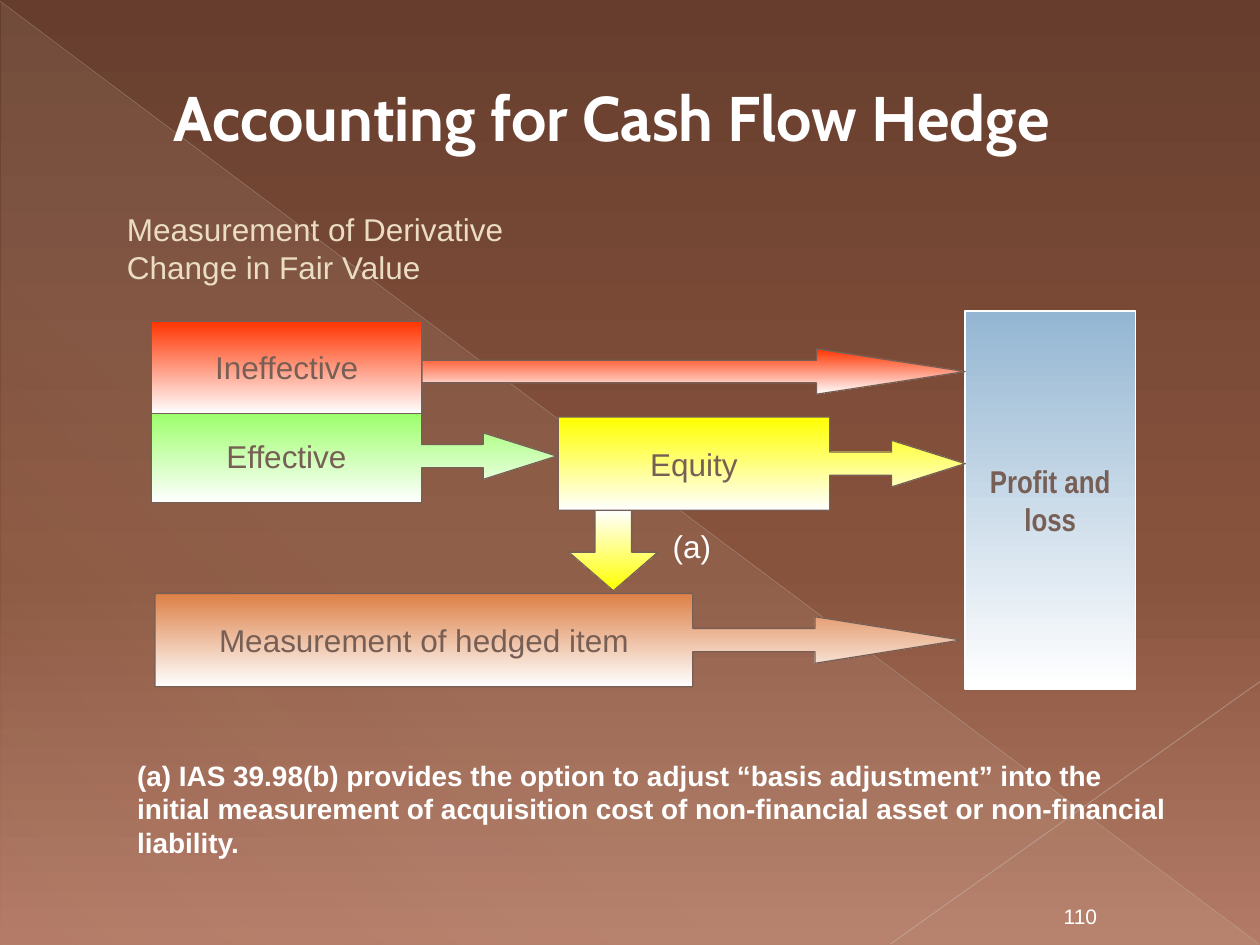
from dataclasses import dataclass

from lxml.etree import SubElement
from pptx import Presentation
from pptx.dml.color import RGBColor as Rgb
from pptx.enum.shapes import MSO_CONNECTOR as Connector, MSO_SHAPE as Shape
from pptx.enum.text import MSO_ANCHOR as Anchor, MSO_AUTO_SIZE as AutoSize, PP_ALIGN as Align
from pptx.oxml.ns import qn
from pptx.util import Pt


@dataclass(frozen=True)
class Theme:
    """Colours, fonts and type sizes of the deck."""
    white: str = "FFFFFF"
    sand: str = "EBDDC3"
    brown: str = "775F55"
    red: str = "FF3300"
    green: str = "99FF66"
    yellow: str = "FFFF00"
    orange: str = "DD8047"
    blue: str = "94B6D2"
    falling_line: str = "C8BCB8"
    rising_line: str = "CEC3BF"
    backdrop: tuple = ((0, "673E2E"), (60, "88533D"), (100, "B37B67"))
    veil: tuple = ((0, "EBDDC3", 10), (70, "EBDDC3", 8), (100, "EBDDC3", 1))
    heading_font: str = "Cabin"
    body_font: str = "Arial"
    narrow_font: str = "Arial Narrow"
    heading_size: int = 36
    body_size: int = 18
    note_size: int = 16
    number_size: int = 12


class SlideBuilder:
    """Draws styled elements on the current slide, with lengths in points."""

    def __init__(self, page, theme):
        self.page = page
        self.theme = theme

    def gradient(self, fill, element, stops, angle=90):
        """Fill with (position, colour, optional opacity) stops at a clockwise angle."""
        fill.gradient()
        fill.gradient_angle = 360 - angle
        stop_list = element.xpath(".//a:gsLst")[0]
        for old in list(stop_list):
            stop_list.remove(old)
        for position, colour, *opacity in stops:
            stop = SubElement(stop_list, qn("a:gs"), pos=str(position * 1000))
            paint = SubElement(stop, qn("a:srgbClr"), val=colour)
            for value in opacity:
                SubElement(paint, qn("a:alpha"), val=str(value * 1000))

    def background(self, stops):
        """Fill the slide background."""
        self.gradient(self.page.background.fill, self.page._element, stops)

    def set_text(self, box, lines, colour, size=None, font=None, bold=False,
                 align=Align.CENTER, anchor=Anchor.MIDDLE, wrap=False):
        """Put paragraphs of one style into a box."""
        frame = box.text_frame
        frame.text = "\n".join(lines)
        frame.word_wrap = wrap
        frame.auto_size = AutoSize.NONE
        frame.vertical_anchor = anchor
        for para in frame.paragraphs:
            para.alignment = align
            para.font.name = font or self.theme.body_font
            para.font.size = Pt(size or self.theme.body_size)
            para.font.bold = bold
            para.font.color.rgb = Rgb.from_string(colour)

    def title(self, text, left, top, width, height):
        """Place the title placeholder above what is drawn so far."""
        box = self.page.shapes.title
        box.left, box.top, box.width, box.height = map(Pt, (left, top, width, height))
        frame = box.text_frame
        frame.margin_left = frame.margin_top = frame.margin_right = frame.margin_bottom = 0
        self.set_text(box, [text], self.theme.white, self.theme.heading_size,
                      self.theme.heading_font, bold=True, wrap=True)
        self.page.shapes._spTree.append(box._element)

    def label(self, text, left, top, width, height, colour, size=None, bold=False,
              align=Align.LEFT, anchor=Anchor.TOP):
        """Add a wrapping text box."""
        box = self.page.shapes.add_textbox(*map(Pt, (left, top, width, height)))
        self.set_text(box, [text], colour, size, bold=bold, align=align, anchor=anchor, wrap=True)

    def shape(self, kind, left, top, width, height, stops, angle=90, outline=None, adjust=()):
        """Add a preset shape with a gradient fill."""
        box = self.page.shapes.add_shape(kind, *map(Pt, (left, top, width, height)))
        box.shadow.inherit = False
        for index, value in enumerate(adjust):
            box.adjustments[index] = value
        self.gradient(box.fill, box._element, stops, angle)
        if outline:
            box.line.color.rgb = Rgb.from_string(outline)
            box.line.width = Pt(0.75)
        else:
            box.line.fill.background()
        return box

    def block(self, kind, left, top, width, height, start, end=None, lines=(),
              outline=None, adjust=(), font=None, bold=False):
        """Add a diagram part that fades between two colours."""
        stops = (0, start), (100, end or self.theme.white)
        box = self.shape(kind, left, top, width, height, stops,
                         outline=outline or self.theme.brown, adjust=adjust)
        if lines:
            self.set_text(box, lines, self.theme.brown, font=font, bold=bold)

    def callout(self, text, left, top, width, start, head=0.79):
        """Add a labelled box with an arrow on its right."""
        self.block(Shape.RIGHT_ARROW_CALLOUT, left, top, width, 53.3, start,
                   lines=[text], adjust=(0.25, 0.25, head, 0.667))

    def line(self, begin, end, colour, width, opacity):
        """Add a translucent straight line."""
        rule = self.page.shapes.add_connector(Connector.STRAIGHT, *map(Pt, begin + end))
        rule.line.color.rgb = Rgb.from_string(colour)
        rule.line.width = Pt(width)
        paint = rule._element.xpath(".//a:ln//a:srgbClr")[0]
        SubElement(paint, qn("a:alpha"), val=str(opacity * 1000))
        SubElement(rule._element.spPr, qn("a:effectLst"))


def main():
    """Build the cash flow hedge slide."""
    theme = Theme()
    deck = Presentation()
    deck.slide_width, deck.slide_height = Pt(720), Pt(540)
    draw = SlideBuilder(deck.slides.add_slide(deck.slide_layouts[5]), theme)

    draw.background(theme.backdrop)
    draw.shape(Shape.RIGHT_TRIANGLE, 0.7, 1.4, 719.3, 538.6, theme.veil, angle=133)
    draw.line((0, 0.7), (719.3, 539.3), theme.falling_line, 0.39, 35)
    draw.line((720, 389.5), (509, 539.3), theme.rising_line, 0.47, 45)

    draw.label("110", 597.6, 510.5, 39.6, 23.8, theme.white, theme.number_size,
               align=Align.CENTER, anchor=Anchor.BOTTOM)
    draw.title("Accounting for Cash Flow Hedge", 16.6, 30.2, 666, 72)

    draw.block(Shape.RECTANGLE, 551.5, 177.8, 97.2, 216, theme.blue,
               lines=["Profit and", "loss"], outline=theme.white,
               font=theme.narrow_font, bold=True)
    draw.block(Shape.DOWN_ARROW, 325, 291.6, 51, 46, theme.white, theme.yellow,
               adjust=(0.41, 0.48))
    draw.label("(a)", 377.3, 297.4, 40.3, 28.8, theme.white)
    draw.label("(a) IAS 39.98(b) provides the option to adjust “basis adjustment” into the "
               "initial measurement of acquisition cost of non-financial asset or "
               "non-financial liability.",
               71.3, 429.8, 604, 65.5, theme.white, theme.note_size, bold=True)

    draw.callout("Effective", 86.4, 234, 231.8, theme.green)
    draw.block(Shape.RECTANGLE, 86.4, 183.6, 154.8, 52.6, theme.red, lines=["Ineffective"])
    draw.block(Shape.RIGHT_ARROW, 241.2, 199.4, 310.3, 25.9, theme.red, adjust=(0.5, 3.28))
    draw.callout("Equity", 319, 238.3, 232.6, theme.yellow)
    draw.callout("Measurement of hedged item", 88.6, 339.1, 460.8, theme.orange, head=1.57)
    draw.label("Measurement of Derivative Change in Fair Value",
               65.5, 116.6, 254.2, 50.4, theme.sand)

    deck.save("out.pptx")


if __name__ == "__main__":
    main()
